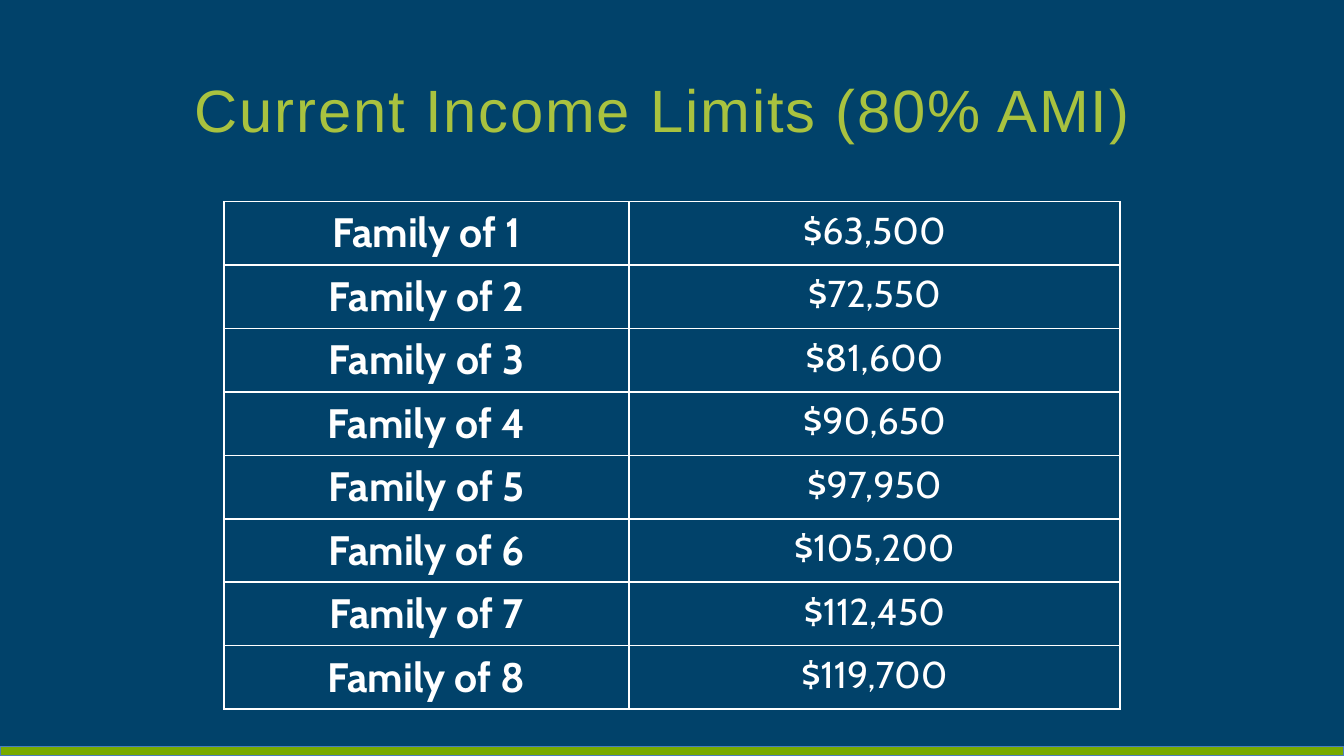
from lxml.etree import SubElement
from pptx import Presentation
from pptx.dml.color import RGBColor
from pptx.enum.shapes import MSO_SHAPE
from pptx.enum.text import MSO_ANCHOR, PP_ALIGN
from pptx.oxml.ns import qn
from pptx.util import Pt

TITLE = "Current Income Limits (80% AMI)"
LIMITS = [
    ("Family of 1", "$63,500"),
    ("Family of 2", "$72,550"),
    ("Family of 3", "$81,600"),
    ("Family of 4", "$90,650"),
    ("Family of 5", "$97,950"),
    ("Family of 6", "$105,200"),
    ("Family of 7", "$112,450"),
    ("Family of 8", "$119,700"),
]
COLUMNS = [(217, 22, True), (263, 20, False)]  # width, text size, bold
ROW_HEIGHT = 34
WIDTH, HEIGHT, BAR_HEIGHT = 720, 405, 5
NAVY, GREEN, LIME, BLUE, WHITE = "01426A", "78AA00", "A9C23F", "4B7EBC", "FFFFFF"


def rgb(value):
    return RGBColor.from_string(value)


def format_run(r, font, size, color, bold=False):
    r.font.name = font
    r.font.size = Pt(size)
    r.font.bold = bold
    r.font.color.rgb = rgb(color)


def add_borders(cell, color, width):
    tcPr = cell._tc.get_or_add_tcPr()
    for side in ("a:lnL", "a:lnR", "a:lnT", "a:lnB"):
        ln = SubElement(tcPr, qn(side), w=str(Pt(width)))
        fill = SubElement(ln, qn("a:solidFill"))
        SubElement(fill, qn("a:srgbClr"), val=color)


def add_title(s):
    sp = s.shapes.title
    sp.left, sp.top, sp.width, sp.height = Pt(97.2), Pt(34), Pt(581), Pt(47)
    tf = sp.text_frame
    tf.text = TITLE
    tf.vertical_anchor = MSO_ANCHOR.BOTTOM
    p = tf.paragraphs[0]
    p.alignment = PP_ALIGN.LEFT
    r = p.runs[0]
    format_run(r, "Arial", 32, LIME)
    r._r.get_or_add_rPr().set("spc", "100")


def add_bar(s):
    sp = s.shapes.add_shape(MSO_SHAPE.RECTANGLE, 0, Pt(HEIGHT - BAR_HEIGHT),
                            Pt(WIDTH), Pt(BAR_HEIGHT))
    sp.shadow.inherit = False
    sp.fill.solid()
    sp.fill.fore_color.rgb = rgb(GREEN)
    sp.line.color.rgb = rgb(BLUE)
    sp.line.width = Pt(0.75)


def add_limits(s):
    width = sum(column[0] for column in COLUMNS)
    table = s.shapes.add_table(len(LIMITS), len(COLUMNS), Pt((WIDTH - width) / 2), Pt(108),
                               Pt(width), Pt(ROW_HEIGHT * len(LIMITS))).table
    table.first_row = table.horz_banding = False
    for j, (column_width, size, bold) in enumerate(COLUMNS):
        table.columns[j].width = Pt(column_width)
        for i, row in enumerate(LIMITS):
            cell = table.cell(i, j)
            cell.text_frame.text = row[j]
            p = cell.text_frame.paragraphs[0]
            p.alignment = PP_ALIGN.CENTER
            format_run(p.runs[0], "Cabin", size, WHITE, bold)
            add_borders(cell, WHITE, 1)
            cell.fill.background()


prs = Presentation()
prs.slide_width, prs.slide_height = Pt(WIDTH), Pt(HEIGHT)
s = prs.slides.add_slide(prs.slide_layouts[5])
s.background.fill.solid()
s.background.fill.fore_color.rgb = rgb(NAVY)
add_bar(s)
add_limits(s)
add_title(s)
prs.save("out.pptx")
